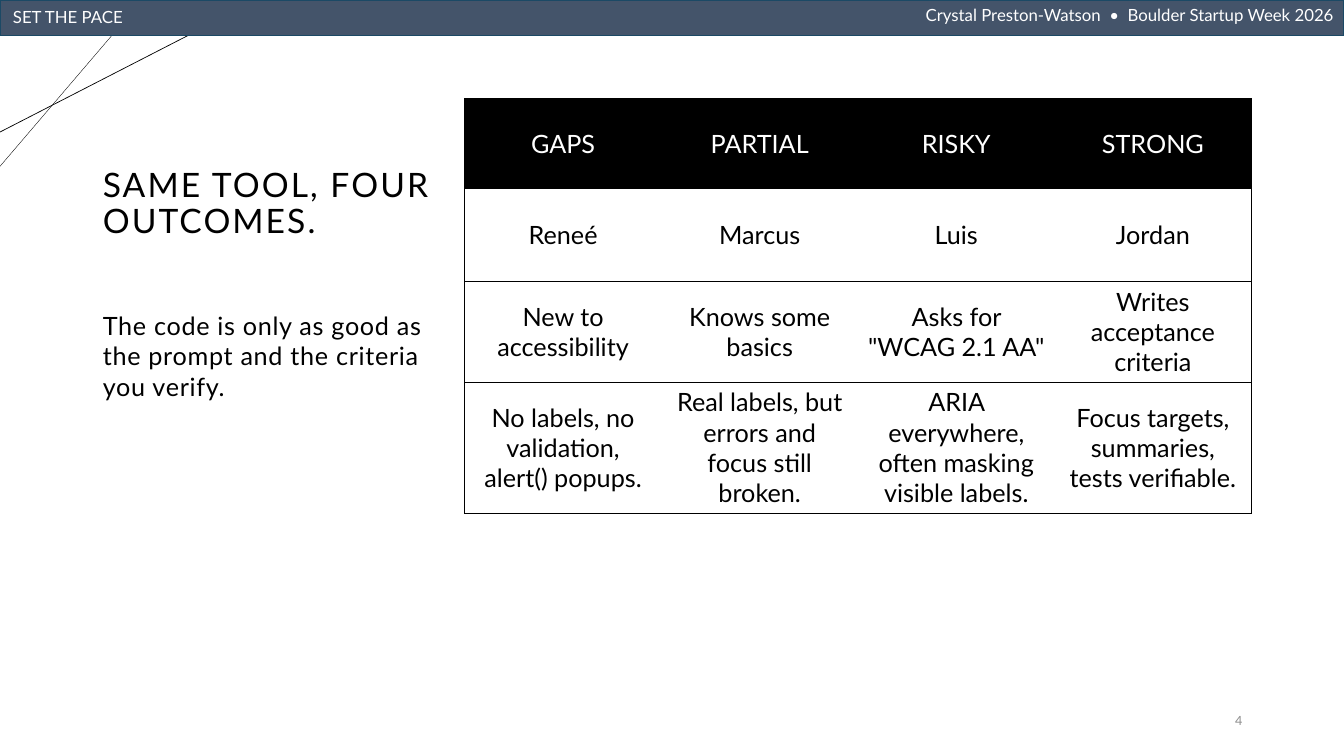
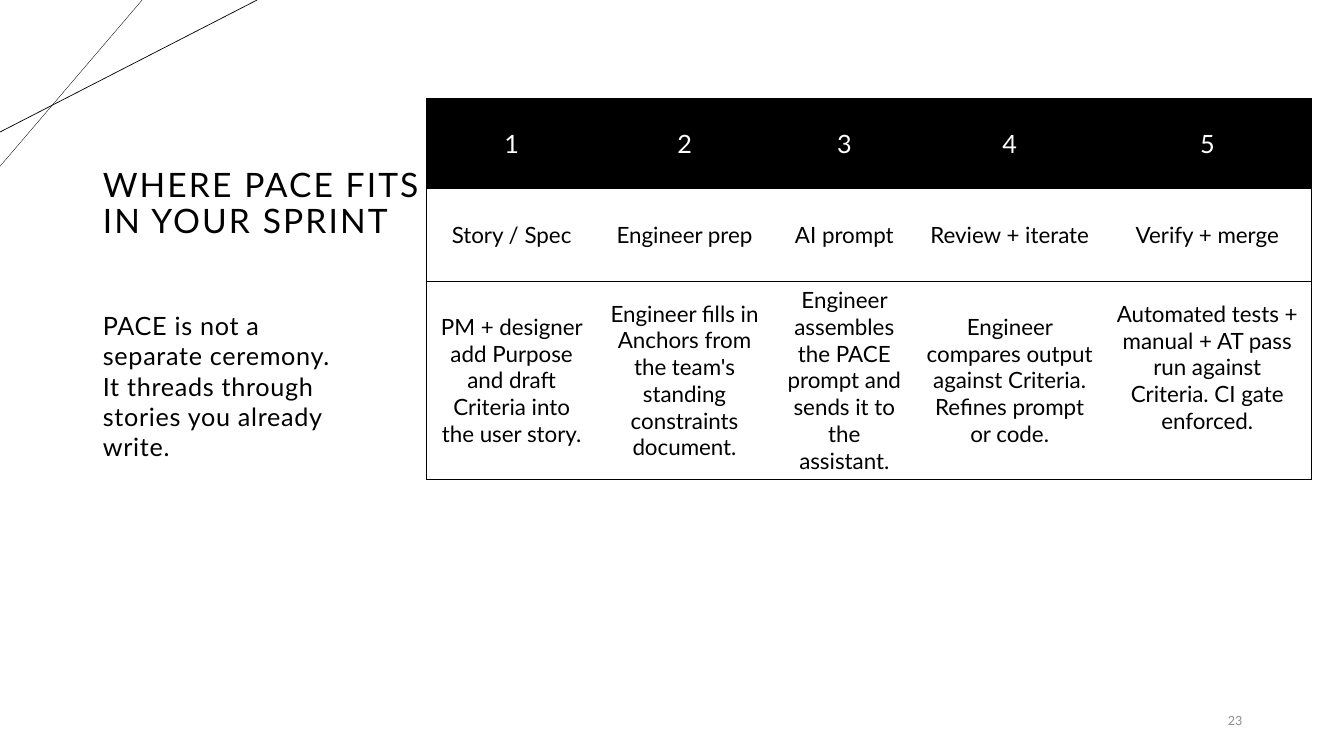
"""Build two table slides on prompting for accessible code."""
from pptx import Presentation
from pptx.dml.color import RGBColor
from pptx.enum.shapes import MSO_CONNECTOR, MSO_SHAPE
from pptx.enum.text import MSO_ANCHOR, MSO_AUTO_SIZE, PP_ALIGN
from pptx.oxml.ns import qn
from pptx.oxml.xmlchemy import OxmlElement
from pptx.util import Inches, Pt

BLACK = RGBColor(0x00, 0x00, 0x00)
WHITE = RGBColor(0xFF, 0xFF, 0xFF)
GRAY = RGBColor(0x8C, 0x8C, 0x8C)
SLATE = RGBColor(0x44, 0x54, 0x6A)
NAVY = RGBColor(0x1B, 0x49, 0x65)
FONT = "Lato"
NO_GRID_STYLE = "{2D5ABB26-0587-4C30-8999-92F81FD0307C}"
TITLE_LAYOUT = 1
TABLE_TOP = 0.98
CORNER_LINES = [((1.41, 0), (0, 1.65), 0.25), ((2.55, 0), (0, 1.31), 0.5)]

OUTCOMES = [
    ["GAPS", "PARTIAL", "RISKY", "STRONG"],
    ["Reneé", "Marcus", "Luis", "Jordan"],
    ["New to accessibility", "Knows some basics", 'Asks for "WCAG 2.1 AA"',
     "Writes acceptance criteria"],
    ["No labels, no validation, alert() popups.",
     "Real labels, but errors and focus still broken.",
     "ARIA everywhere, often masking visible labels.",
     "Focus targets, summaries, tests verifiable."],
]
SPRINT = [
    ["1", "2", "3", "4", "5"],
    ["Story / Spec", "Engineer prep", "AI prompt", "Review + iterate", "Verify + merge"],
    ["PM + designer add Purpose and draft Criteria into the user story.",
     "Engineer fills in Anchors from the team's standing constraints document.",
     "Engineer assembles the PACE prompt and sends it to the assistant.",
     "Engineer compares output against Criteria. Refines prompt or code.",
     "Automated tests + manual + AT pass run against Criteria. CI gate enforced."],
]


def write(tf, text, size, color, align=PP_ALIGN.LEFT, spacing=0):
    """Set one paragraph of text and format it."""
    tf.text = text
    p = tf.paragraphs[0]
    p.alignment = align
    p.space_before = Pt(0)
    for r in p.runs:
        r.font.name = FONT
        r.font.size = Pt(size)
        r.font.color.rgb = color
        if spacing:
            r.font._element.set("spc", str(int(spacing * 100)))
    return p


def place(sp, left, top, width, height):
    """Move and size a shape, in inches."""
    sp.left, sp.top = Inches(left), Inches(top)
    sp.width, sp.height = Inches(width), Inches(height)


def add_corner_lines(slide):
    """Draw the two crossing lines in the top left corner."""
    for start, end, weight in CORNER_LINES:
        line = slide.shapes.add_connector(
            MSO_CONNECTOR.STRAIGHT, *map(Inches, start + end))
        line.line.color.rgb = BLACK
        line.line.width = Pt(weight)
        line.element.spPr.append(OxmlElement("a:effectLst"))


def add_label(slide, box, text, size, color, align, anchor):
    """Add a single text box."""
    tf = slide.shapes.add_textbox(*map(Inches, box)).text_frame
    tf.word_wrap = True
    tf.vertical_anchor = anchor
    write(tf, text, size, color, align)


def add_band(slide, label, credit):
    """Add the top band with a section label and a credit."""
    sp = slide.shapes.add_shape(
        MSO_SHAPE.RECTANGLE, 0, 0, Inches(13.33), Inches(0.35))
    sp.shadow.inherit = False
    sp.fill.solid()
    sp.fill.fore_color.rgb = SLATE
    sp.line.color.rgb = NAVY
    sp.line.width = Pt(1)
    sp.text_frame.vertical_anchor = MSO_ANCHOR.TOP
    write(sp.text_frame, credit, 12, WHITE, PP_ALIGN.RIGHT)
    add_label(slide, (0.03, 0.02, 6.68, 0.3), label, 12, WHITE,
              PP_ALIGN.LEFT, MSO_ANCHOR.TOP)


def add_title(slide, text):
    """Fill the title placeholder."""
    sp = slide.shapes.title
    place(sp, 0.92, 0.98, 3.55, 2.1)
    tf = sp.text_frame
    tf.auto_size = MSO_AUTO_SIZE.NONE
    tf.vertical_anchor = MSO_ANCHOR.MIDDLE
    write(tf, text, 24, BLACK, spacing=1.5).line_spacing = 0.9


def add_body(slide, text, width):
    """Fill the body placeholder without a bullet."""
    sp = slide.placeholders[1]
    place(sp, 0.92, 3.08, width, 3.54)
    tf = sp.text_frame
    tf.auto_size = MSO_AUTO_SIZE.NONE
    tf.margin_top = 0
    p = write(tf, text, 18, BLACK, spacing=0.5)
    pPr = p._p.get_or_add_pPr()
    pPr.set("marL", "0")
    pPr.set("indent", "0")
    pPr.append(OxmlElement("a:buNone"))


def add_border(cell, side):
    """Draw a thin black border on one side of a cell."""
    ln = OxmlElement(f"a:ln{side}")
    ln.set("w", str(Pt(0.5)))
    fill = OxmlElement("a:solidFill")
    color = OxmlElement("a:srgbClr")
    color.set("val", str(BLACK))
    fill.append(color)
    ln.append(fill)
    cell._tc.get_or_add_tcPr().append(ln)


def add_grid(slide, rows, left, widths, heights, size):
    """Add a table with a black header, row rules and an outer frame."""
    frame = slide.shapes.add_table(
        len(rows), len(widths), Inches(left), Inches(TABLE_TOP),
        Inches(sum(widths)), Inches(sum(heights)))
    table = frame.table
    table.horz_banding = False
    for style in frame.element.iter(qn("a:tableStyleId")):
        style.text = NO_GRID_STYLE
    for column, width in zip(table.columns, widths):
        column.width = Inches(width)
    for row, height in zip(table.rows, heights):
        row.height = Inches(height)
    for i, texts in enumerate(rows):
        for j, text in enumerate(texts):
            cell = table.cell(i, j)
            sides = "L" * (j == 0) + "R" * (j == len(widths) - 1) + "TB"
            for side in sides:
                add_border(cell, side)
            cell.fill.solid()
            cell.fill.fore_color.rgb = WHITE if i else BLACK
            cell.vertical_anchor = MSO_ANCHOR.MIDDLE
            write(cell.text_frame, text, size if i else 18,
                  BLACK if i else WHITE, PP_ALIGN.CENTER)
    return table


def add_slide(prs, title, body, body_width, number):
    """Add a slide with the shared lines, title, body and page number."""
    slide = prs.slides.add_slide(prs.slide_layouts[TITLE_LAYOUT])
    add_corner_lines(slide)
    add_title(slide, title)
    add_body(slide, body, body_width)
    add_label(slide, (11.34, 6.95, 1.08, 0.4), number, 9, GRAY,
              PP_ALIGN.RIGHT, MSO_ANCHOR.MIDDLE)
    return slide


def main():
    """Build and save the presentation."""
    prs = Presentation()
    prs.slide_width, prs.slide_height = Inches(13.33), Inches(7.5)

    slide = add_slide(
        prs, "SAME TOOL, FOUR OUTCOMES.",
        "The code is only as good as the prompt and the criteria you verify.",
        3.55, "4")
    add_grid(slide, OUTCOMES, 4.61, [1.95] * 4, [0.89, 0.92, 0.99, 1.3], 18)
    add_band(slide, "SET THE PACE",
             "Crystal Preston-Watson  •  Boulder Startup Week 2026")

    slide = add_slide(
        prs, "WHERE PACE FITS IN YOUR SPRINT",
        "PACE is not a separate ceremony. It threads through stories you already write.",
        2.65, "23")
    table = add_grid(slide, SPRINT, 4.23, [1.69, 1.74, 1.43, 1.85, 2.07],
                     [0.89, 0.92, 1.96], 16)
    table.cell(2, 4).margin_bottom = Inches(0.31)

    prs.save("out.pptx")


if __name__ == "__main__":
    main()
